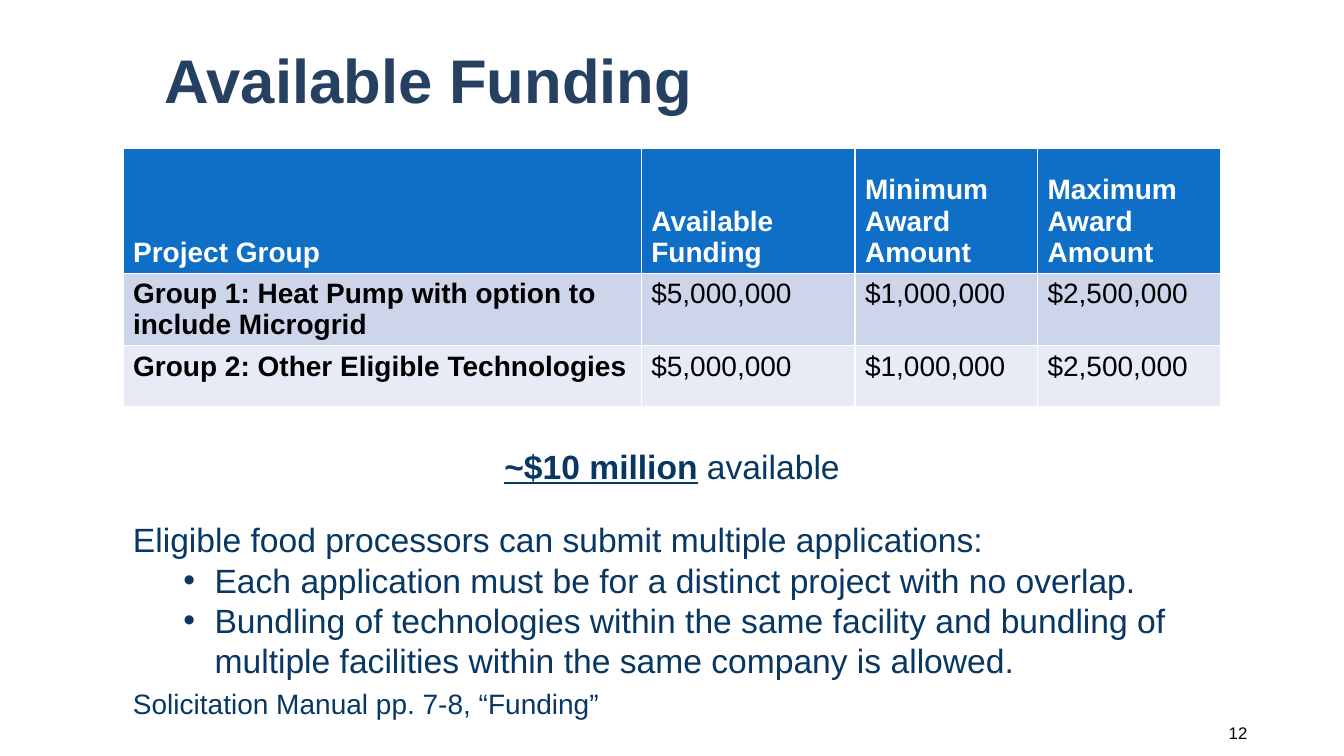
from lxml.etree import SubElement
from pptx import Presentation
from pptx.dml.color import RGBColor
from pptx.enum.text import MSO_ANCHOR, MSO_AUTO_SIZE, PP_ALIGN
from pptx.oxml.ns import qn
from pptx.util import Pt

EMU_PER_PX = 9144
FONT = "Arial"
WHITE = RGBColor(0xFF, 0xFF, 0xFF)
BLACK = RGBColor(0x00, 0x00, 0x00)
TITLE_NAVY = RGBColor(0x25, 0x40, 0x61)
BODY_NAVY = RGBColor(0x08, 0x37, 0x63)
HEADER_BLUE = RGBColor(0x0F, 0x6F, 0xC6)
ROW_FILLS = [HEADER_BLUE, RGBColor(0xCC, 0xD5, 0xEA), RGBColor(0xE7, 0xEB, 0xF5)]

COLUMN_WIDTHS = [514, 212, 181, 182]
ROW_HEIGHTS = [124, 60, 60]
FUNDING_ROWS = [
    ["Project Group", "Available Funding", "Minimum Award Amount", "Maximum Award Amount"],
    ["Group 1: Heat Pump with option to include Microgrid",
     "$5,000,000", "$1,000,000", "$2,500,000"],
    ["Group 2: Other Eligible Technologies", "$5,000,000", "$1,000,000", "$2,500,000"],
]
APPLICATION_RULES = [
    "Each application must be for a distinct project with no overlap.",
    "Bundling of technologies within the same facility and bundling of "
    "multiple facilities within the same company is allowed.",
]


def px(length):
    return length * EMU_PER_PX


def add_span(para, text, size, color, bold=False, underline=False):
    span = para.add_run()
    span.text = text
    span.font.name = FONT
    span.font.size = Pt(size)
    span.font.color.rgb = color
    span.font.bold = bold
    span.font.underline = underline


def add_bullet(para):
    properties = para._p.get_or_add_pPr()
    properties.set("marL", str(px(81)))
    properties.set("indent", str(px(-31)))
    SubElement(properties, qn("a:buFont"), typeface=FONT)
    SubElement(properties, qn("a:buChar"), char="•")


def add_box(page, left, top, width, height):
    box = page.shapes.add_textbox(px(left), px(top), px(width), px(height))
    box.text_frame.word_wrap = True
    return box.text_frame


def add_title(page, text):
    title = page.shapes.title
    title.left, title.top, title.width, title.height = px(153), px(26), px(1089), px(114)
    frame = title.text_frame
    frame.auto_size = MSO_AUTO_SIZE.NONE
    frame.vertical_anchor = MSO_ANCHOR.MIDDLE
    para = frame.paragraphs[0]
    para.alignment = PP_ALIGN.LEFT
    para.line_spacing = 0.9
    add_span(para, text, 44, TITLE_NAVY, bold=True)


def add_funding_table(page):
    table = page.shapes.add_table(
        len(FUNDING_ROWS), len(COLUMN_WIDTHS), px(122), px(147),
        px(sum(COLUMN_WIDTHS)), px(sum(ROW_HEIGHTS))).table
    for column, width in zip(table.columns, COLUMN_WIDTHS):
        column.width = px(width)
    for row_index, texts in enumerate(FUNDING_ROWS):
        table.rows[row_index].height = px(ROW_HEIGHTS[row_index])
        header = row_index == 0
        for column_index, text in enumerate(texts):
            cell = table.cell(row_index, column_index)
            cell.fill.solid()
            cell.fill.fore_color.rgb = ROW_FILLS[row_index]
            cell.vertical_anchor = MSO_ANCHOR.BOTTOM if header else MSO_ANCHOR.TOP
            add_span(cell.text_frame.paragraphs[0], text, 20,
                     WHITE if header else BLACK, bold=header or column_index == 0)


def add_application_notes(page):
    frame = add_box(page, 122, 437, 1089, 276)
    total = frame.paragraphs[0]
    total.alignment = PP_ALIGN.CENTER
    add_span(total, "~$10 million", 24, BODY_NAVY, bold=True, underline=True)
    add_span(total, " available", 24, BODY_NAVY)
    intro = frame.add_paragraph()
    intro.space_before = Pt(24)
    add_span(intro, "Eligible food processors can submit multiple applications:", 24, BODY_NAVY)
    for rule in APPLICATION_RULES:
        para = frame.add_paragraph()
        para.level = 1
        add_bullet(para)
        add_span(para, rule, 24, BODY_NAVY)


def add_manual_reference(page):
    para = add_box(page, 122, 683, 1069, 40).paragraphs[0]
    para.line_spacing = 0.8
    add_span(para, "Solicitation Manual pp. 7-8, “Funding”", 20, BODY_NAVY)


def add_page_number(page, number):
    frame = add_box(page, 1050, 707, 197, 40)
    frame.vertical_anchor = MSO_ANCHOR.MIDDLE
    para = frame.paragraphs[0]
    para.alignment = PP_ALIGN.RIGHT
    add_span(para, number, 12, BLACK)


def main():
    deck = Presentation()
    deck.slide_width, deck.slide_height = px(1333), px(750)
    page = deck.slides.add_slide(deck.slide_layouts[5])
    add_title(page, "Available Funding")
    add_funding_table(page)
    add_application_notes(page)
    add_manual_reference(page)
    add_page_number(page, "12")
    deck.save("out.pptx")


if __name__ == "__main__":
    main()
